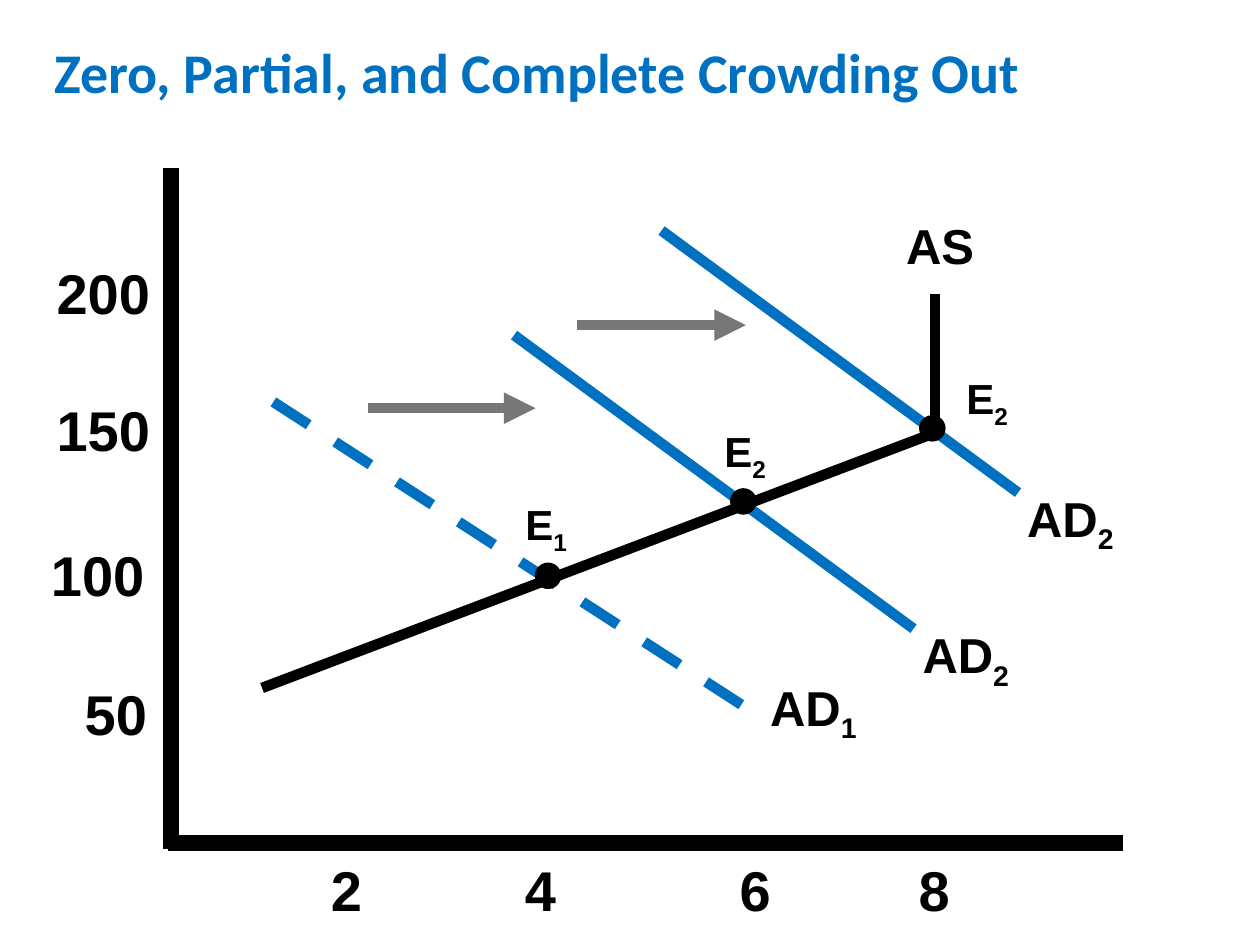
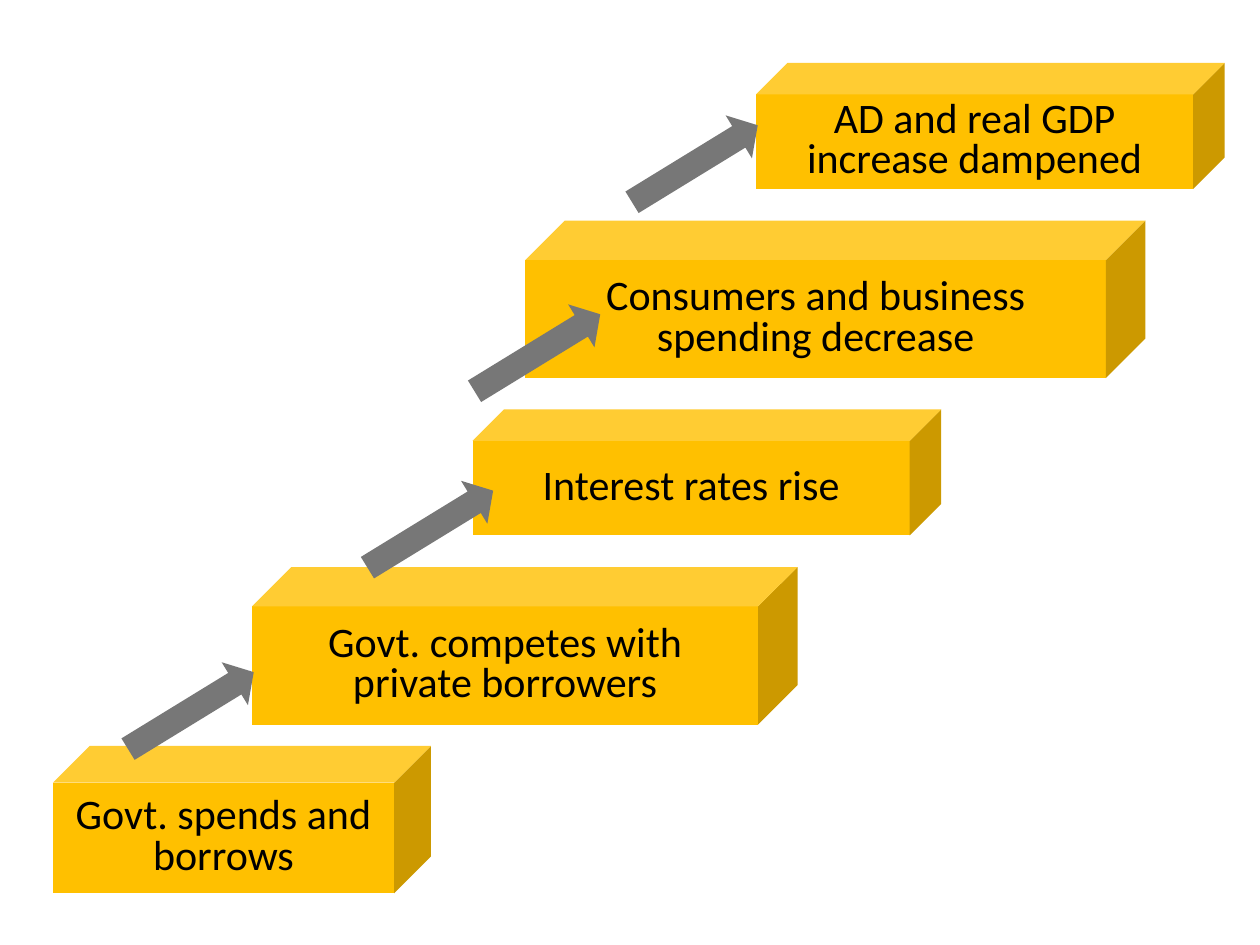
"""Build two slides on crowding out: an AD/AS graph and a chain of steps."""
from lxml import etree
from pptx import Presentation
from pptx.dml.color import RGBColor
from pptx.enum.dml import MSO_LINE
from pptx.enum.shapes import MSO_CONNECTOR, MSO_SHAPE
from pptx.enum.text import MSO_ANCHOR, PP_ALIGN
from pptx.oxml.ns import qn
from pptx.util import Inches, Pt

STRAIGHT = MSO_CONNECTOR.STRAIGHT
OVAL, CUBE, ARROW = MSO_SHAPE.OVAL, MSO_SHAPE.CUBE, MSO_SHAPE.RIGHT_ARROW
LEFT, CENTER = PP_ALIGN.LEFT, PP_ALIGN.CENTER
TOP, MIDDLE = MSO_ANCHOR.TOP, MSO_ANCHOR.MIDDLE
DASH = MSO_LINE.DASH
BLACK, WHITE, BLUE, GRAY, GOLD = "000000", "FFFFFF", "0070C0", "777777", "FFC000"

TITLE = "Zero, Partial, and Complete Crowding Out"
LINES = [
    ((1.33, 6.69), (8.91, 6.69), BLACK, {"width": 9}),
    ((1.36, 1.33), (1.36, 6.74), BLACK, {"width": 9}),
    ((2.08, 5.46), (7.38, 3.45), BLACK, {}),
    ((7.42, 3.41), (7.42, 2.33), BLACK, {}),
    ((2.17, 3.19), (6.08, 5.72), BLUE, {"dash": DASH}),
    ((4.08, 2.66), (7.25, 4.99), BLUE, {}),
    ((5.25, 1.83), (8.08, 3.91), BLUE, {}),
    ((2.92, 3.24), (4.25, 3.24), GRAY, {"head": True}),
    ((4.58, 2.58), (5.92, 2.58), GRAY, {"head": True}),
]
DOTS = [(4.25, 4.47), (5.8, 3.88), (7.3, 3.3)]
LABELS = {
    32: [
        ("200", "", 0.25, 2, 1.14),
        ("150", "", 0.25, 3.09, 1.14),
        ("100", "", 0.17, 4.24, 1.21),
        ("50", "", 0.45, 5.34, 0.94),
        ("2", "", 2, 6.74, 1.5),
        ("4", "", 3.58, 6.74, 1.42),
        ("6", "", 5.33, 6.74, 1.33),
        ("8", "", 6.75, 6.74, 1.33),
    ],
    28: [
        ("AS", "", 6.75, 1.66, 1.42),
        ("AD", "1", 5.83, 5.33, 1.25),
        ("AD", "2", 7, 4.91, 1.33),
        ("AD", "2", 7.83, 3.83, 1.33),
    ],
    24: [
        ("E", "1", 3.92, 3.91, 0.83),
        ("E", "2", 5.33, 3.33, 1.17),
        ("E", "2", 7.42, 2.91, 0.83),
    ],
}
HEIGHTS = {32: 0.58, 28: 0.53, 24: 0.46}

STEPS = [
    ("Govt. spends and borrows", 0.42, 5.92, 3, 1.17),
    ("Govt. competes with private borrowers", 2, 4.5, 4.33, 1.25),
    ("Interest rates rise", 3.75, 3.25, 3.72, 1),
    ("Consumers and business spending decrease", 4.17, 1.75, 4.92, 1.25),
    ("AD and real GDP increase dampened", 6, 0.5, 3.72, 1),
]
ARROWS = [(0.93, 5.44), (2.83, 4), (3.68, 2.6), (4.93, 1.1)]


def tint(code):
    return RGBColor.from_string(code)


def write(frame, text, sub="", size=24, font="Arial", color=BLACK,
          bold=False, align=CENTER, anchor=TOP, space=1.0):
    frame.word_wrap = True
    frame.vertical_anchor = anchor
    para = frame.paragraphs[0]
    para.alignment = align
    para.line_spacing = space
    for part in filter(None, (text, sub)):
        run = para.add_run()
        run.text = part
        run.font.size, run.font.name, run.font.bold = Pt(size), font, bold
        run.font.color.rgb = tint(color)
    if sub:
        run._r.get_or_add_rPr().set("baseline", "-25000")


def draw(slide, start, end, color, width=6, dash=None, head=False):
    ends = [Inches(n) for n in (*start, *end)]
    link = slide.shapes.add_connector(STRAIGHT, *ends)
    link.line.color.rgb = tint(color)
    link.line.width = Pt(width)
    if dash:
        link.line.dash_style = dash
    props = link._element.spPr
    if head:
        etree.SubElement(props.find(qn("a:ln")), qn("a:tailEnd"), type="triangle")
    etree.SubElement(props, qn("a:effectLst"))


def block(slide, kind, box, color):
    shape = slide.shapes.add_shape(kind, *[Inches(n) for n in box])
    shape.shadow.inherit = False
    shape.fill.solid()
    shape.fill.fore_color.rgb = tint(color)
    shape.line.fill.background()
    return shape


def graph(deck):
    slide = deck.slides.add_slide(deck.slide_layouts[5])
    title = slide.shapes.title
    title.left, title.top = Inches(0.33), Inches(0.25)
    title.width, title.height = Inches(9.17), Inches(0.59)
    title.fill.solid()
    title.fill.fore_color.rgb = tint(WHITE)
    write(title.text_frame, TITLE, size=32, font="Calibri", color=BLUE,
          bold=True, align=LEFT)
    for start, end, color, style in LINES:
        draw(slide, start, end, color, **style)
    for x, y in DOTS:
        dot = block(slide, OVAL, (x, y, 0.2, 0.2), BLACK)
        dot.line.color.rgb = tint(BLACK)
        dot.line.width = Pt(0.75)
    for size, group in LABELS.items():
        for text, sub, x, y, wide in group:
            box = [Inches(n) for n in (x, y, wide, HEIGHTS[size])]
            label = slide.shapes.add_textbox(*box)
            write(label.text_frame, text, sub, size=size, bold=True)


def stairs(deck):
    slide = deck.slides.add_slide(deck.slide_layouts[6])
    for text, *box in STEPS:
        frame = block(slide, CUBE, box, GOLD).text_frame
        frame.margin_left = frame.margin_right = Inches(0.15)
        write(frame, text, font="Calibri", anchor=MIDDLE, space=0.8)
    for x, y in ARROWS:
        arrow = block(slide, ARROW, (x, y, 1.17, 0.4), GRAY)
        arrow.adjustments[1] = 0.44
        arrow.rotation = 328.5


def main():
    deck = Presentation()
    deck.slide_width, deck.slide_height = Inches(10), Inches(7.5)
    graph(deck)
    stairs(deck)
    deck.save("out.pptx")


if __name__ == "__main__":
    main()
